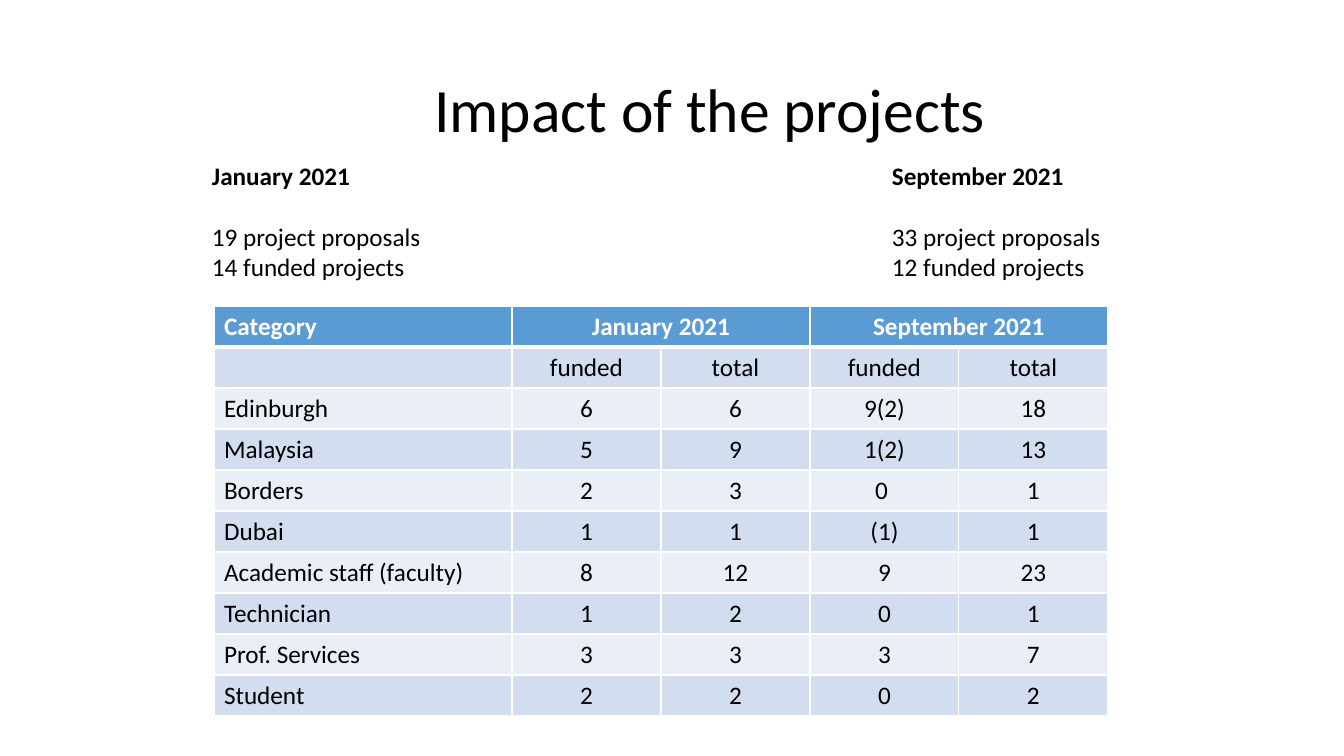
import dataclasses

import pptx
import pptx.dml.color
import pptx.enum.text
import pptx.oxml
import pptx.oxml.ns
import pptx.util

TITLE = "Impact of the projects"
ROUNDS = [
    ("January 2021", ["19 project proposals", "14 funded projects"], (202, 155, 458, 194)),
    ("September 2021", ["33 project proposals", "12 funded projects"], (882, 155, 301, 163)),
]
ROWS = [
    ("Category", "January 2021", "", "September 2021", ""),
    ("", "funded", "total", "funded", "total"),
    ("Edinburgh", "6", "6", "9(2)", "18"),
    ("Malaysia", "5", "9", "1(2)", "13"),
    ("Borders", "2", "3", "0 ", "1"),
    ("Dubai", "1", "1", "(1)", "1"),
    ("Academic staff (faculty)", "8", "12", "9", "23"),
    ("Technician", "1", "2", "0", "1"),
    ("Prof. Services", "3", "3", "3", "7"),
    ("Student", "2", "2", "0", "2"),
]
TITLE_AREA = (424, 40, 828, 146)
TABLE_LEFT, TABLE_TOP = 214, 306
COLUMN_WIDTHS = [298, 149, 149, 149, 149]
ROW_HEIGHT = 41
EMU_PER_PX = 914400 / 100.8
ALIGN = pptx.enum.text.PP_ALIGN
ANCHOR = pptx.enum.text.MSO_ANCHOR


@dataclasses.dataclass(frozen=True)
class Theme:
    font: str = "Calibri"
    text: str = "000000"
    white: str = "FFFFFF"
    header: str = "5B9BD5"
    bands: tuple = ("EAEFF7", "D2DEEF")
    title_size: int = 44
    body_size: int = 18
    thin: int = 1
    thick: int = 3


THEME = Theme()


def px(length):
    return pptx.util.Emu(round(length * EMU_PER_PX))


def rgb(value):
    return pptx.dml.color.RGBColor.from_string(value)


def add_span(para, text, size=THEME.body_size, color=THEME.text, bold=False):
    span = para.add_run()
    span.text = text
    span.font.name = THEME.font
    span.font.size = pptx.util.Pt(size)
    span.font.bold = bold
    span.font.color.rgb = rgb(color)


def add_title(page):
    title = page.shapes.title
    title.left, title.top, title.width, title.height = map(px, TITLE_AREA)
    title.text_frame.vertical_anchor = ANCHOR.MIDDLE
    para = title.text_frame.paragraphs[0]
    para.alignment = ALIGN.LEFT
    para.line_spacing = 0.9
    add_span(para, TITLE, THEME.title_size)


def add_round(page, heading, lines, area):
    frame = page.shapes.add_textbox(*map(px, area)).text_frame
    frame.word_wrap = True
    para = frame.paragraphs[0]
    para.space_after = pptx.util.Pt(22)
    add_span(para, heading, bold=True)
    for line in lines:
        add_span(frame.add_paragraph(), line)


def add_borders(cell, row):
    widths = {
        "lnL": THEME.thin,
        "lnR": THEME.thin,
        "lnT": THEME.thick if row == 1 else THEME.thin,
        "lnB": THEME.thick if row == 0 else THEME.thin,
    }
    properties = cell._tc.get_or_add_tcPr()
    for side, width in widths.items():
        properties.append(pptx.oxml.parse_xml(
            f'<a:{side} {pptx.oxml.ns.nsdecls("a")} w="{pptx.util.Pt(width)}">'
            f'<a:solidFill><a:srgbClr val="{THEME.white}"/></a:solidFill></a:{side}>'))


def add_impact_table(page):
    table = page.shapes.add_table(
        len(ROWS), len(COLUMN_WIDTHS), px(TABLE_LEFT), px(TABLE_TOP),
        px(sum(COLUMN_WIDTHS)), px(ROW_HEIGHT * len(ROWS))).table
    for column, width in zip(table.columns, COLUMN_WIDTHS):
        column.width = px(width)
    for row, values in enumerate(ROWS):
        table.rows[row].height = px(ROW_HEIGHT)
        header = row == 0
        for column, value in enumerate(values):
            cell = table.cell(row, column)
            add_borders(cell, row)
            cell.fill.solid()
            cell.fill.fore_color.rgb = rgb(THEME.header if header else THEME.bands[row % 2])
            if value:
                para = cell.text_frame.paragraphs[0]
                para.alignment = ALIGN.CENTER if column else ALIGN.LEFT
                add_span(para, value, color=THEME.white if header else THEME.text, bold=header)
    for first in (1, 3):
        table.cell(0, first).merge(table.cell(0, first + 1))


def main():
    deck = pptx.Presentation()
    deck.slide_width, deck.slide_height = px(1344), px(756)
    page = deck.slides.add_slide(deck.slide_layouts[5])
    add_title(page)
    for heading, lines, area in ROUNDS:
        add_round(page, heading, lines, area)
    add_impact_table(page)
    deck.save("out.pptx")


if __name__ == "__main__":
    main()
